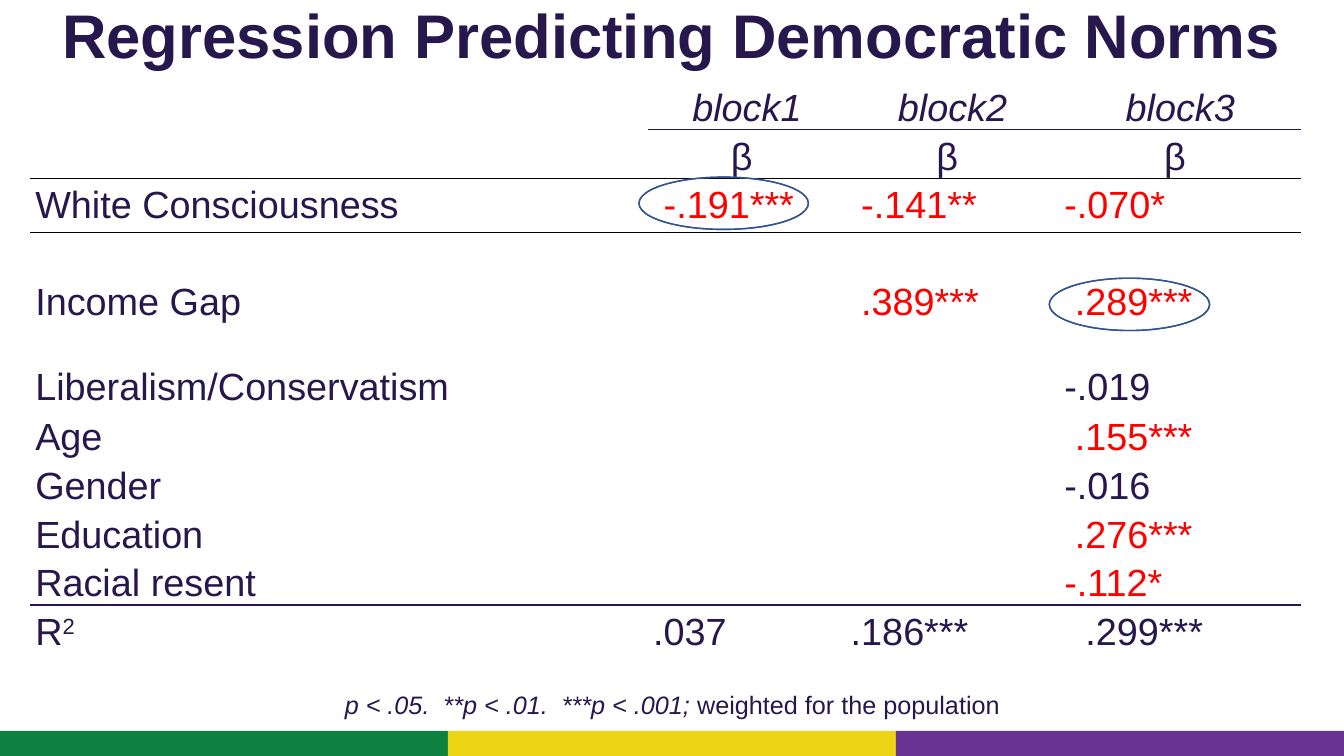
from dataclasses import dataclass

from lxml import etree
from pptx import Presentation
from pptx.dml.color import RGBColor
from pptx.enum import shapes, text
from pptx.oxml import ns
from pptx.util import Pt


@dataclass(frozen=True)
class Theme:
    font: str = "Arial"
    ink: str = "26174D"
    rule: str = "000000"
    significant: str = "FF0000"
    ring_fill: str = "4472C4"
    ring_line: str = "325491"
    bands: tuple = ("0D8240", "EDD414", "693394")
    title_size: float = 44
    table_size: float = 27
    note_size: float = 18


THEME = Theme()
WIDTH, HEIGHT = 960, 540
NO_GRID_STYLE = "{2D5ABB26-0587-4C30-8999-92F81FD0307C}"
COLUMNS = (441.4, 141.1, 152.6, 172.8)
LINE_ROW, TIGHT_ROW, GAP_ROW = 34.7, 31, 30.5
ROW_HEIGHTS = {2: 38.9, 3: GAP_ROW, 5: GAP_ROW, 6: TIGHT_ROW}
RESULTS = (
    ("", "block1", "block2", "block3"),
    ("", "β ", "β ", "β "),
    ("White Consciousness", " -.191***", " -.141**", "-.070*"),
    ("", "", "", ""),
    ("Income Gap", "", " .389***", " .289***"),
    ("", "", "", ""),
    ("Liberalism/Conservatism", "", "", "-.019"),
    ("Age", "", "", " .155***"),
    ("Gender", "", "", "-.016"),
    ("Education", "", "", " .276***"),
    ("Racial resent", "", "", "-.112*"),
    ("R2", ".037", ".186***", ".299***"),
)
HEADER_ROWS = 2
FIT_ROW = len(RESULTS) - 1
RULES = {0: (1, THEME.ink), 1: (0, THEME.rule), FIT_ROW - 1: (0, THEME.ink)}


def add_span(para, words, size, color=THEME.ink, bold=False, italic=False):
    span = para.add_run()
    span.text = words
    font = span.font
    font.name, font.size = THEME.font, Pt(size)
    font.bold, font.italic = bold, italic
    font.color.rgb = RGBColor.from_string(color)
    return span


def add_solid(page, kind, left, top, width, height, fill, line=None):
    shape = page.shapes.add_shape(kind, Pt(left), Pt(top), Pt(width), Pt(height))
    shape.shadow.inherit = False
    shape.fill.solid()
    shape.fill.fore_color.rgb = RGBColor.from_string(fill)
    if line:
        shape.line.color.rgb = RGBColor.from_string(line)
        shape.line.width = Pt(1)
    else:
        shape.line.fill.background()
    return shape


def add_bands(page):
    width = WIDTH / len(THEME.bands)
    for index, color in enumerate(THEME.bands):
        add_solid(page, shapes.MSO_SHAPE.RECTANGLE, index * width, 522, width, 18, color)


def set_title(page, words):
    title = page.shapes.title
    title.left, title.top, title.width, title.height = Pt(0), Pt(-1.4), Pt(WIDTH), Pt(58.3)
    title.text_frame.vertical_anchor = text.MSO_ANCHOR.MIDDLE
    para = title.text_frame.paragraphs[0]
    para.alignment = text.PP_ALIGN.CENTER
    para.line_spacing = 0.9
    add_span(para, words, THEME.title_size, bold=True)


def add_border(cell, side, color):
    properties = cell._tc.get_or_add_tcPr()
    line = etree.Element(ns.qn(f"a:ln{side}"), w=str(Pt(1)))
    fill = etree.SubElement(line, ns.qn("a:solidFill"))
    etree.SubElement(fill, ns.qn("a:srgbClr"), val=color)
    properties.insert(0, line)


def fill_cell(cell, words, row, column):
    cell.fill.background()
    cell.margin_left = cell.margin_right = Pt(3.6)
    cell.margin_top = cell.margin_bottom = Pt(0)
    para = cell.text_frame.paragraphs[0]
    if not words:
        para.font.size = Pt(THEME.note_size)
        return
    if row != 6:
        para.line_spacing = 1.15
    if row < HEADER_ROWS:
        para.alignment = text.PP_ALIGN.CENTER
    if row == 1:
        cell.vertical_anchor = text.MSO_ANCHOR.MIDDLE
    if row == FIT_ROW and column == 0:
        add_span(para, words[0], THEME.table_size)
        power = add_span(para, words[1:], THEME.table_size)
        power.font._element.set("baseline", "30000")
        return
    if row == FIT_ROW and column == 3:
        cell.margin_left = Pt(18.6)
    starred = "*" in words and row != FIT_ROW
    color = THEME.significant if starred else THEME.ink
    add_span(para, words, THEME.table_size, color, italic=row == 0)


def add_results(page):
    heights = [ROW_HEIGHTS.get(row, LINE_ROW) for row in range(len(RESULTS))]
    frame = page.shapes.add_table(
        len(RESULTS), len(COLUMNS), Pt(21.6), Pt(57.6), Pt(sum(COLUMNS)), Pt(sum(heights)))
    table = frame.table
    table.first_row = table.horz_banding = False
    table._tbl.tblPr.find(ns.qn("a:tableStyleId")).text = NO_GRID_STYLE
    for column, width in zip(table.columns, COLUMNS):
        column.width = Pt(width)
    for row, (height, values) in enumerate(zip(heights, RESULTS)):
        table.rows[row].height = Pt(height)
        for column, words in enumerate(values):
            fill_cell(table.cell(row, column), words, row, column)
    for row, (first, color) in RULES.items():
        for column in range(first, len(COLUMNS)):
            add_border(table.cell(row, column), "B", color)
            add_border(table.cell(row + 1, column), "T", color)


def add_note(page):
    box = page.shapes.add_textbox(Pt(204.5), Pt(488.9), Pt(551.5), Pt(51.1))
    box.text_frame.word_wrap = True
    para = box.text_frame.paragraphs[0]
    para.alignment = text.PP_ALIGN.CENTER
    add_span(para, "p < .05.  **p < .01.  ***p < .001; ", THEME.note_size, italic=True)
    add_span(para, "weighted for the population", THEME.note_size)


def add_ring(page, left, top, width):
    ring = add_solid(page, shapes.MSO_SHAPE.DONUT, left, top, width, 37.4,
                     THEME.ring_fill, THEME.ring_line)
    ring.adjustments[0] = 0


def main():
    deck = Presentation()
    deck.slide_width, deck.slide_height = Pt(WIDTH), Pt(HEIGHT)
    page = deck.slides.add_slide(deck.slide_layouts[5])
    add_bands(page)
    set_title(page, "Regression Predicting Democratic Norms")
    add_results(page)
    add_note(page)
    add_ring(page, 456.4, 126.5, 121)
    add_ring(page, 749.5, 198.7, 114.5)
    deck.save("out.pptx")


if __name__ == "__main__":
    main()
